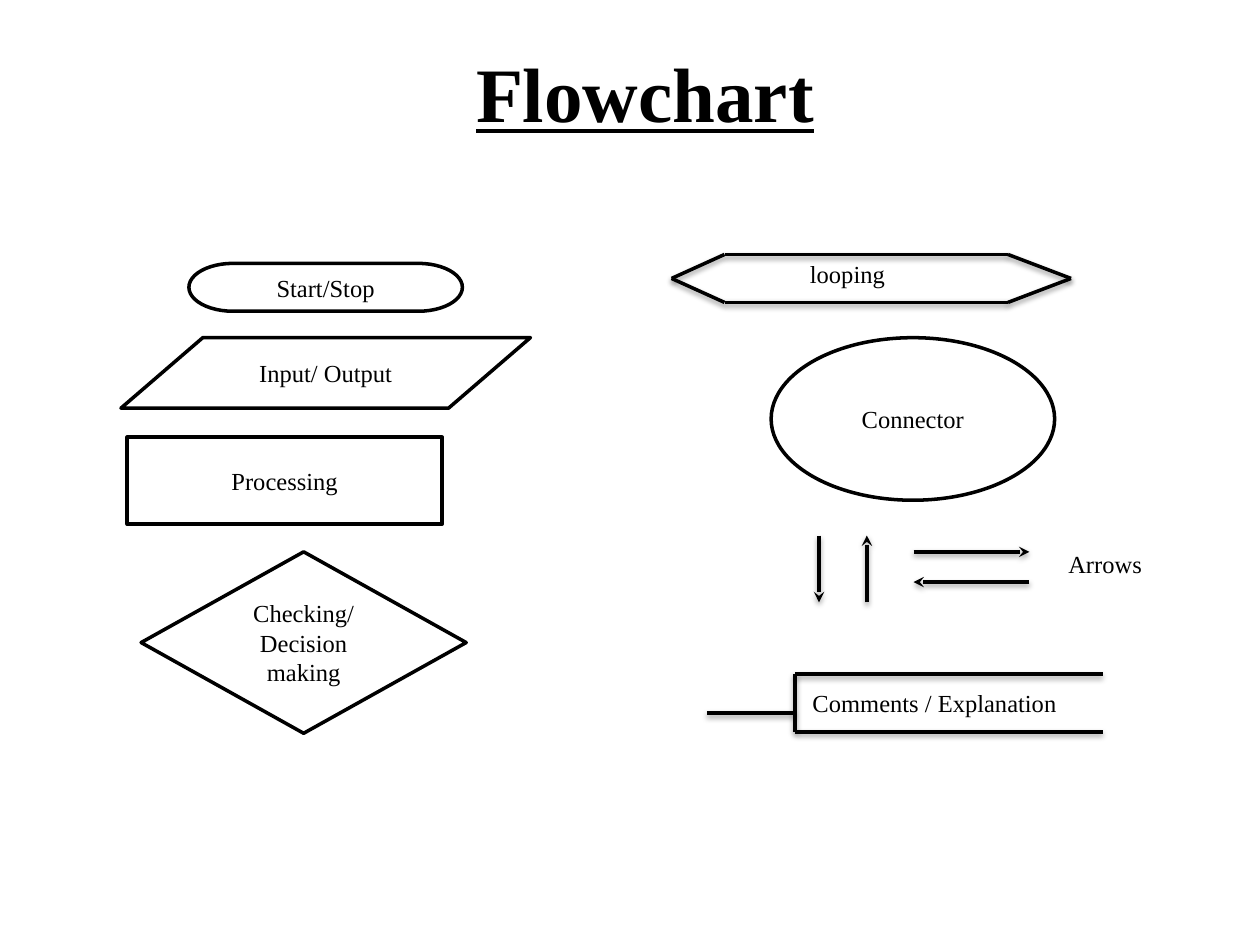
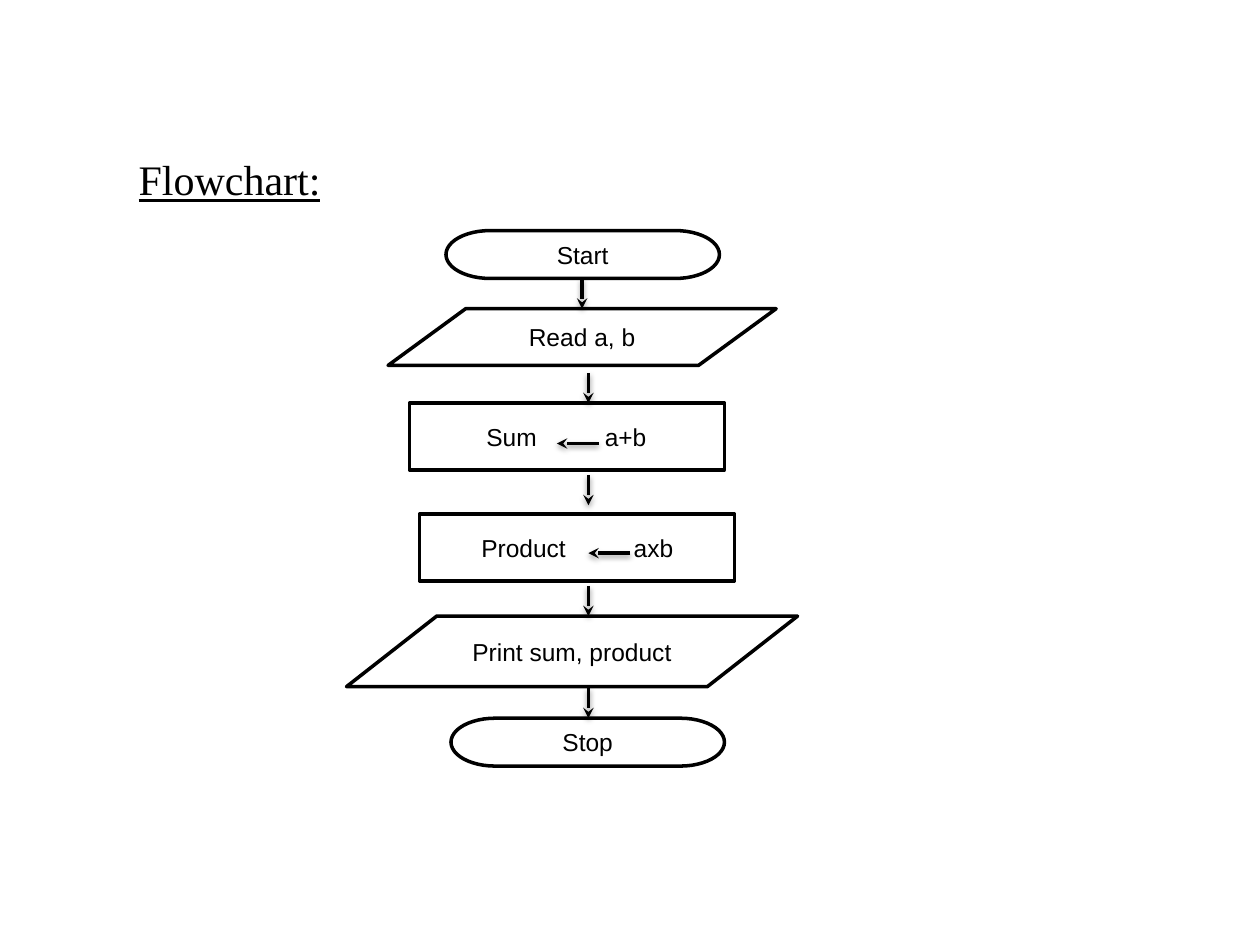
from itertools import pairwise

from lxml.etree import SubElement as sub
from pptx import Presentation
from pptx.dml.color import RGBColor
from pptx.enum.shapes import MSO_CONNECTOR as Link, MSO_SHAPE as Form
from pptx.enum.text import MSO_ANCHOR as Anchor, MSO_AUTO_SIZE as Auto, PP_ALIGN as Align
from pptx.oxml.ns import qn
from pptx.util import Inches, Pt

INK, PAPER = "000000", "FFFFFF"
SERIF, SANS = "Times New Roman", "Arial"


def color(code):
    """Turn a hex string into a colour."""
    return RGBColor.from_string(code)


def write(frame, text, face, size=14, align=Align.LEFT, bold=False, under=False):
    """Set the text of a frame and format its run."""
    frame.word_wrap = True
    frame.text = text
    para = frame.paragraphs[0]
    para.alignment = align
    for run in para.runs:
        font = run.font
        font.name, font.size = face, Pt(size)
        font.bold, font.underline = bold, under
        font.color.rgb = color(INK)


def title(slide, text, place, anchor, **style):
    """Move and format the title placeholder."""
    head = slide.shapes.title
    head.left, head.top, head.width, head.height = map(Inches, place)
    frame = head.text_frame
    write(frame, text, SERIF, under=True, **style)
    frame.auto_size = Auto.NONE
    frame.vertical_anchor = anchor


def label(slide, text, *place):
    """Add a plain line of text."""
    box = slide.shapes.add_textbox(*map(Inches, place))
    write(box.text_frame, text, SERIF)


def node(slide, form, text, face, *place):
    """Add an outlined flowchart symbol with centred text."""
    shape = slide.shapes.add_shape(form, *map(Inches, place))
    shape.shadow.inherit = False
    shape.fill.solid()
    shape.fill.fore_color.rgb = color(PAPER)
    shape.line.color.rgb = color(INK)
    shape.line.width = Pt(2)
    frame = shape.text_frame
    write(frame, text, face, align=Align.CENTER)
    frame.vertical_anchor = Anchor.MIDDLE
    return shape


def line(slide, start, end, arrow=False):
    """Add a shadowed line, with an arrowhead at its end if asked."""
    link = slide.shapes.add_connector(Link.STRAIGHT, *map(Inches, (*start, *end)))
    link.line.color.rgb = color(INK)
    link.line.width = Pt(2)
    props = link.element.spPr
    if arrow:
        sub(props.find(qn("a:ln")), qn("a:tailEnd"), type="stealth")
    shade = sub(sub(props, qn("a:effectLst")), qn("a:outerShdw"), blurRad=str(Pt(3.1)),
                dist=str(Pt(1.6)), dir="5400000", rotWithShape="0")
    tint = sub(shade, qn("a:srgbClr"), val=INK)
    sub(tint, qn("a:alpha"), val="38000")


def path(slide, *points):
    """Join points with straight lines."""
    for start, end in pairwise(points):
        line(slide, start, end)


def assign(slide, name, value, place, inset, stop, tip):
    """Add a box in which an arrow hands a value to a name."""
    box = node(slide, Form.RECTANGLE, f"{name}\t{value}", SANS, *place)
    box.text_frame.margin_left = Inches(inset)
    para = box.text_frame.paragraphs[0]
    para.alignment = Align.LEFT
    tabs = sub(para._p.get_or_add_pPr(), qn("a:tabLst"))
    sub(tabs, qn("a:tab"), pos=str(Inches(stop)), algn="l")
    line(slide, (tip[0] + 0.33, tip[1]), tip, arrow=True)


def symbols(slide):
    """Show the flowchart symbols and what they mean."""
    title(slide, "Flowchart", (0.62, 0.26, 9, 0.94), Anchor.MIDDLE,
          size=44, align=Align.CENTER, bold=True)
    for form, text, *place in (
        (Form.FLOWCHART_TERMINATOR, "Start/Stop", 1.5, 2.09, 2.17, 0.38),
        (Form.FLOWCHART_DATA, "Input/ Output", 0.96, 2.68, 3.25, 0.56),
        (Form.RECTANGLE, "Processing", 1.01, 3.47, 2.5, 0.69),
        (Form.DIAMOND, "Checking/Decision making", 1.12, 4.38, 2.58, 1.44),
        (Form.OVAL, "Connector", 6.12, 2.68, 2.25, 1.29),
    ):
        node(slide, form, text, SERIF, *place)

    path(slide, (5.75, 2.02), (8, 2.02), (8.5, 2.21), (8, 2.4),
         (5.75, 2.4), (5.33, 2.21), (5.75, 2.02))
    label(slide, "looping", 6.33, 2.01, 1.83, 0.34)

    for start, end in (
        ((6.5, 4.25), (6.5, 4.78)),
        ((6.88, 4.78), (6.88, 4.25)),
        ((7.25, 4.38), (8.17, 4.38)),
        ((8.17, 4.62), (7.25, 4.62)),
    ):
        line(slide, start, end, arrow=True)
    label(slide, "Arrows", 8.38, 4.31, 1.25, 0.34)

    path(slide, (8.75, 5.35), (6.31, 5.35), (6.31, 5.81), (8.75, 5.81))
    line(slide, (5.61, 5.66), (6.31, 5.66))
    label(slide, "Comments / Explanation", 6.35, 5.41, 2.27, 0.34)


def sample(slide):
    """Show the flowchart of a sum and a product."""
    title(slide, "Flowchart:", (1, 1.17, 3.58, 0.5), Anchor.TOP, size=24)
    for form, text, *place in (
        (Form.FLOWCHART_TERMINATOR, "Start", 3.54, 1.83, 2.17, 0.38),
        (Form.FLOWCHART_DATA, "Read a, b", 3.08, 2.45, 3.08, 0.45),
        (Form.FLOWCHART_DATA, "Print sum, product", 2.75, 4.89, 3.58, 0.56),
        (Form.FLOWCHART_TERMINATOR, "Stop", 3.58, 5.7, 2.17, 0.38),
    ):
        node(slide, form, text, SANS, *place)
    assign(slide, "Sum", "a+b", (3.25, 3.2, 2.5, 0.53), 0.61, 0.94, (4.42, 3.52))
    assign(slide, "Product", "axb", (3.33, 4.08, 2.5, 0.53), 0.49, 1.21, (4.67, 4.39))
    for x, y in ((4.62, 2.21), (4.67, 2.96), (4.67, 3.77), (4.67, 4.65), (4.67, 5.46)):
        line(slide, (x, y), (x, y + 0.24), arrow=True)


def main():
    """Build both slides and save them."""
    deck = Presentation()
    deck.slide_width, deck.slide_height = Inches(10), Inches(7.5)
    layout = deck.slide_layouts.get_by_name("Title Only")
    for build in (symbols, sample):
        build(deck.slides.add_slide(layout))
    deck.save("out.pptx")


if __name__ == "__main__":
    main()
